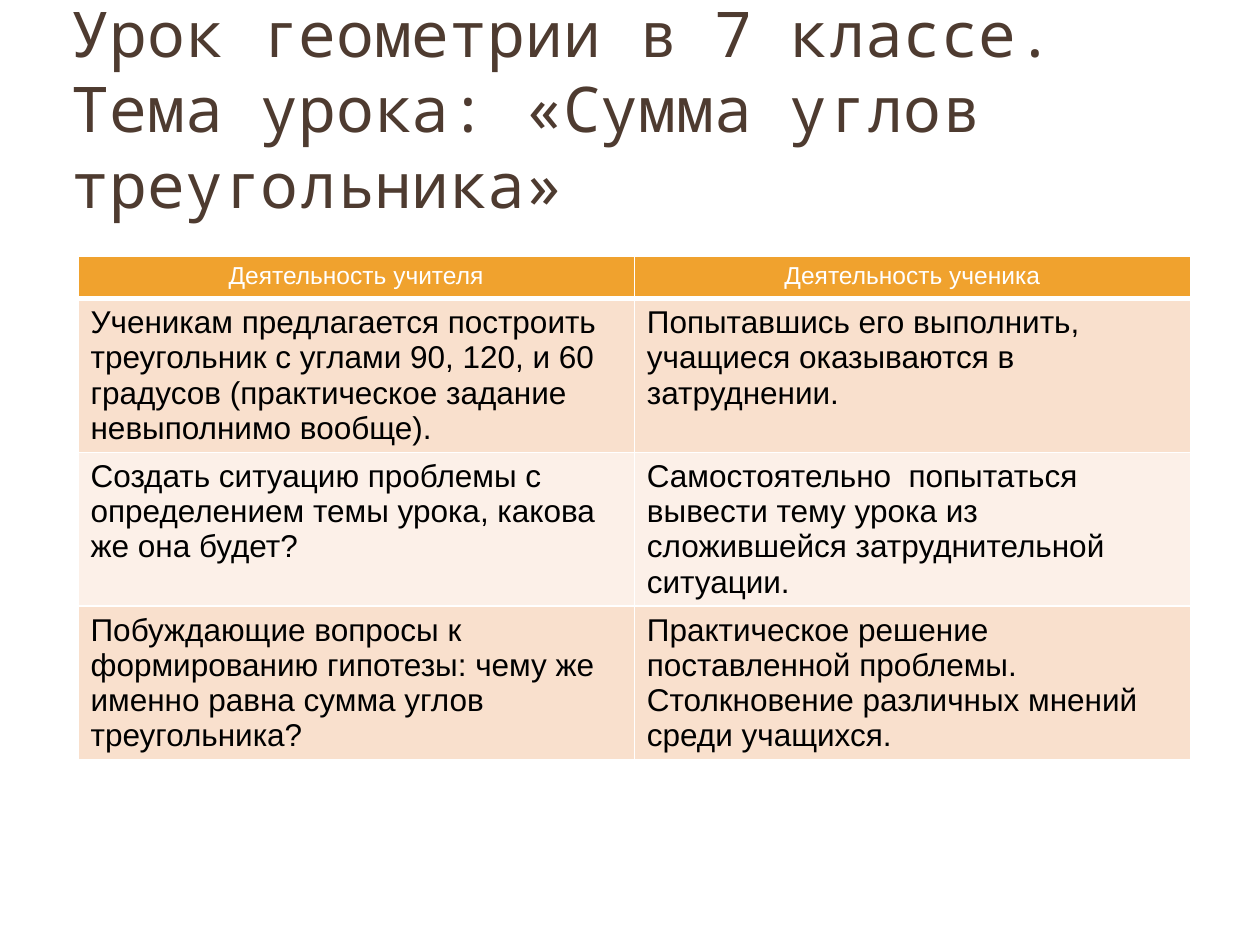
"""Build a lesson slide with a title and a table of teacher and pupil activities."""
from lxml.etree import SubElement
from pptx import Presentation
from pptx.dml.color import RGBColor
from pptx.enum.text import MSO_ANCHOR, MSO_AUTO_SIZE, PP_ALIGN
from pptx.oxml.ns import qn
from pptx.util import Pt

TITLE = "Урок геометрии в 7 классе.\vТема урока: «Сумма углов треугольника»"
ROWS = [
    ("Деятельность учителя", "Деятельность ученика"),
    ("Ученикам предлагается построить треугольник с углами 90, 120, и 60 градусов "
     "(практическое задание невыполнимо вообще).",
     "Попытавшись его выполнить, учащиеся оказываются в затруднении."),
    ("Создать ситуацию проблемы с  определением темы урока, какова же она будет?",
     "Самостоятельно  попытаться вывести тему урока из сложившейся "
     "затруднительной ситуации."),
    ("Побуждающие вопросы к формированию гипотезы: чему же именно равна сумма "
     "углов треугольника?",
     "Практическое решение поставленной проблемы. Столкновение различных мнений "
     "среди учащихся."),
]
HEIGHTS = [24.5, 72.7, 56.2, 72.7]
LEFT, TOP, WIDTH = 44.6, 146.2, 635.8

BROWN = RGBColor(0x4E, 0x3B, 0x30)
WHITE = RGBColor(0xFF, 0xFF, 0xFF)
BLACK = RGBColor(0, 0, 0)
ORANGE = RGBColor(0xF0, 0xA2, 0x2E)
PEACH = RGBColor(0xF9, 0xE0, 0xCD)
CREAM = RGBColor(0xFC, 0xF0, 0xE8)


def write(frame, text, size, color, font="Arial", align=PP_ALIGN.LEFT):
    para = frame.paragraphs[0]
    para.text = text
    para.alignment = align
    for run in para.runs:
        run.font.name = font
        run.font.size = Pt(size)
        run.font.bold = False
        run.font.color.rgb = color


def edge(cell, head):
    props = cell._tc.get_or_add_tcPr()
    sides = {"lnL": 1, "lnR": 1, "lnT": 1, "lnB": 3 if head else 1}
    for spot, (side, width) in enumerate(sides.items()):
        line = SubElement(props, qn(f"a:{side}"), w=str(Pt(width)))
        fill = SubElement(line, qn("a:solidFill"))
        SubElement(fill, qn("a:srgbClr"), val=str(WHITE))
        props.insert(spot, line)


def add_title(slide):
    title = slide.shapes.title
    title.left, title.top, title.width, title.height = map(Pt, (33.8, 16.6, 648, 90))
    frame = title.text_frame
    frame.word_wrap = True
    frame.auto_size = MSO_AUTO_SIZE.NONE
    frame.vertical_anchor = MSO_ANCHOR.MIDDLE
    write(frame, TITLE, 36, BROWN, font="Noto Sans Mono")


def add_grid(slide):
    cols = len(ROWS[0])
    box = [Pt(n) for n in (LEFT, TOP, WIDTH, sum(HEIGHTS))]
    table = slide.shapes.add_table(len(ROWS), cols, *box).table
    for col in table.columns:
        col.width = Pt(WIDTH / cols)
    for r, (texts, height) in enumerate(zip(ROWS, HEIGHTS)):
        table.rows[r].height = Pt(height)
        head = r == 0
        for c, text in enumerate(texts):
            cell = table.cell(r, c)
            cell.fill.solid()
            cell.fill.fore_color.rgb = ORANGE if head else PEACH if r % 2 else CREAM
            edge(cell, head)
            if head:
                write(cell.text_frame, text, 14, WHITE, align=PP_ALIGN.CENTER)
            else:
                write(cell.text_frame, text, 18, BLACK)


def main():
    deck = Presentation()
    deck.slide_width, deck.slide_height = Pt(720), Pt(540)
    slide = deck.slides.add_slide(deck.slide_layouts[5])
    add_title(slide)
    add_grid(slide)
    deck.save("out.pptx")


if __name__ == "__main__":
    main()
